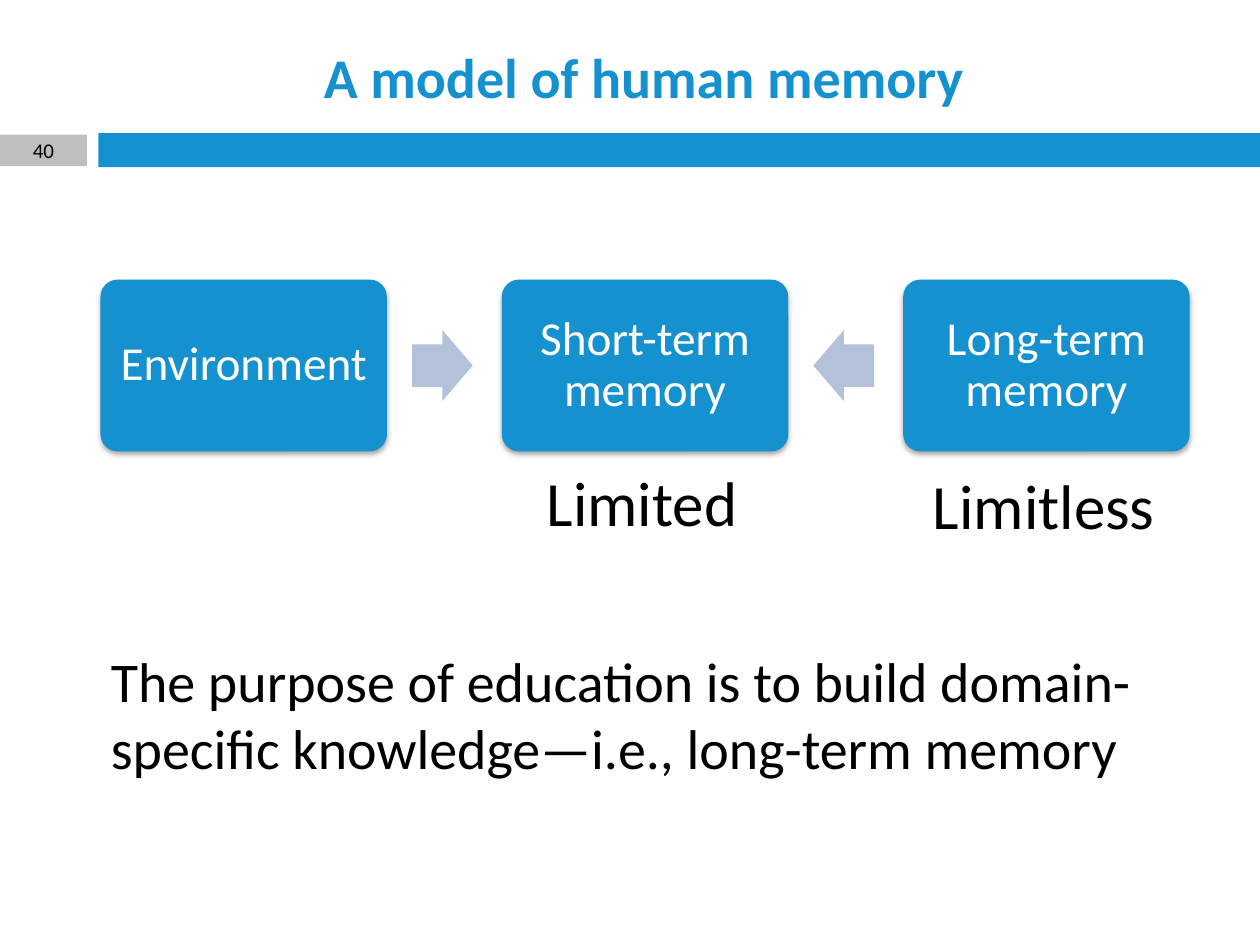
import dataclasses

import lxml.etree
import pptx
import pptx.dml.color
import pptx.enum.shapes
import pptx.enum.text
import pptx.oxml.ns
import pptx.util

Pt = pptx.util.Pt
Kind = pptx.enum.shapes.MSO_SHAPE
Align = pptx.enum.text.PP_ALIGN
Anchor = pptx.enum.text.MSO_ANCHOR


@dataclasses.dataclass(frozen=True)
class Theme:
    """Colours, font and type sizes of the slide."""
    blue: str = "1691D0"
    grey: str = "BFBFBF"
    pale: str = "B3C1DB"
    white: str = "FFFFFF"
    black: str = "000000"
    font: str = "Calibri"
    small: int = 12
    node: int = 27
    large: int = 32
    label: int = 36


THEME = Theme()


def tint(name):
    """Return the colour for a hex value."""
    return pptx.dml.color.RGBColor.from_string(name)


def write(shape, text, size, color, align=Align.CENTER, bold=False,
          anchor=Anchor.MIDDLE, inset=(7.2, 3.6), lead=None):
    """Put one paragraph of formatted text in a shape."""
    frame = shape.text_frame
    side, edge = map(Pt, inset)
    look = {"word_wrap": True, "vertical_anchor": anchor, "margin_left": side,
            "margin_right": side, "margin_top": edge, "margin_bottom": edge}
    for key, value in look.items():
        setattr(frame, key, value)
    para = frame.paragraphs[0]
    para.text, para.alignment, para.line_spacing = text, align, lead
    style = {"name": THEME.font, "size": Pt(size), "bold": bold}
    for key, value in style.items():
        setattr(para.runs[0].font, key, value)
    para.runs[0].font.color.rgb = tint(color)


def block(slide, kind, box, color, adjust=()):
    """Add a flat filled shape without outline."""
    shape = slide.shapes.add_shape(kind, *map(Pt, box))
    shape.shadow.inherit = False
    shape.fill.solid()
    shape.fill.fore_color.rgb = tint(color)
    shape.line.fill.background()
    for index, value in enumerate(adjust):
        shape.adjustments[index] = value
    return shape


def shade(shape):
    """Give a shape a soft shadow straight below it."""
    tag = pptx.oxml.ns.qn
    effects = shape._element.spPr.find(tag("a:effectLst"))
    outer = lxml.etree.SubElement(
        effects, tag("a:outerShdw"), blurRad=str(Pt(3.1)), dist=str(Pt(1.8)),
        dir="5400000", rotWithShape="0")
    color = lxml.etree.SubElement(outer, tag("a:srgbClr"), val=THEME.black)
    lxml.etree.SubElement(color, tag("a:alpha"), val="35000")


def note(slide, box, text, size, color=THEME.black, **look):
    """Add a text box."""
    write(slide.shapes.add_textbox(*map(Pt, box)), text, size, color, **look)


def header(slide, box, title, number):
    """Draw the title above a bar with the page number at its left."""
    left, top, width, height = box
    start, bar, tab = 56.2, 19.4, 49.7
    base = top + height - bar
    block(slide, Kind.RECTANGLE, (left + start, base, width - start, bar), THEME.blue)
    page = block(slide, Kind.RECTANGLE, (left, base + 0.8, tab, 18), THEME.grey)
    write(page, number, THEME.small, THEME.black)
    note(slide, (left + start, top, 623.5, 49), title, THEME.large,
         THEME.blue, bold=True)


def flow(slide, box, names):
    """Draw evenly spaced nodes with arrows that point to the middle one."""
    left, top, width, height = box
    wide, long, tall = 163.7, 34.6, 40.5
    pitch = (width - wide) / (len(names) - 1)
    for index, name in enumerate(names):
        x = left + index * pitch
        node = block(slide, Kind.ROUNDED_RECTANGLE, (x, top, wide, height),
                     THEME.blue, (0.1,))
        shade(node)
        write(node, name, THEME.node, THEME.white, inset=(7.2, 7.2), lead=0.9)
        if index < len(names) - 1:
            spot = (x + wide + 14.4, top + (height - tall) / 2, long, tall)
            arrow = block(slide, Kind.RIGHT_ARROW, spot, THEME.pale, (0.6, 0.5))
            arrow.rotation = 180 * (index >= len(names) // 2)


def main():
    """Build and save the slide."""
    deck = pptx.Presentation()
    deck.slide_width, deck.slide_height = Pt(720), Pt(540)
    slide = deck.slides.add_slide(deck.slide_layouts[6])
    header(slide, (0, 18.7, 720, 76.8), "A model of human memory", "40")
    flow(slide, (57.4, 159.8, 622.4, 98.2),
         ("Environment", "Short-term memory", "Long-term memory"))
    note(slide, (301.7, 261.4, 130.3, 72.7), "Limited", THEME.label, anchor=Anchor.TOP)
    note(slide, (496, 263, 201, 72.7), "Limitless", THEME.label, anchor=Anchor.TOP)
    note(slide, (56.2, 365.8, 608.4, 85),
         "The purpose of education is to build domain-specific knowledge—i.e., "
         "long-term memory", THEME.large, align=Align.LEFT, anchor=Anchor.TOP)
    deck.save("out.pptx")


if __name__ == "__main__":
    main()
